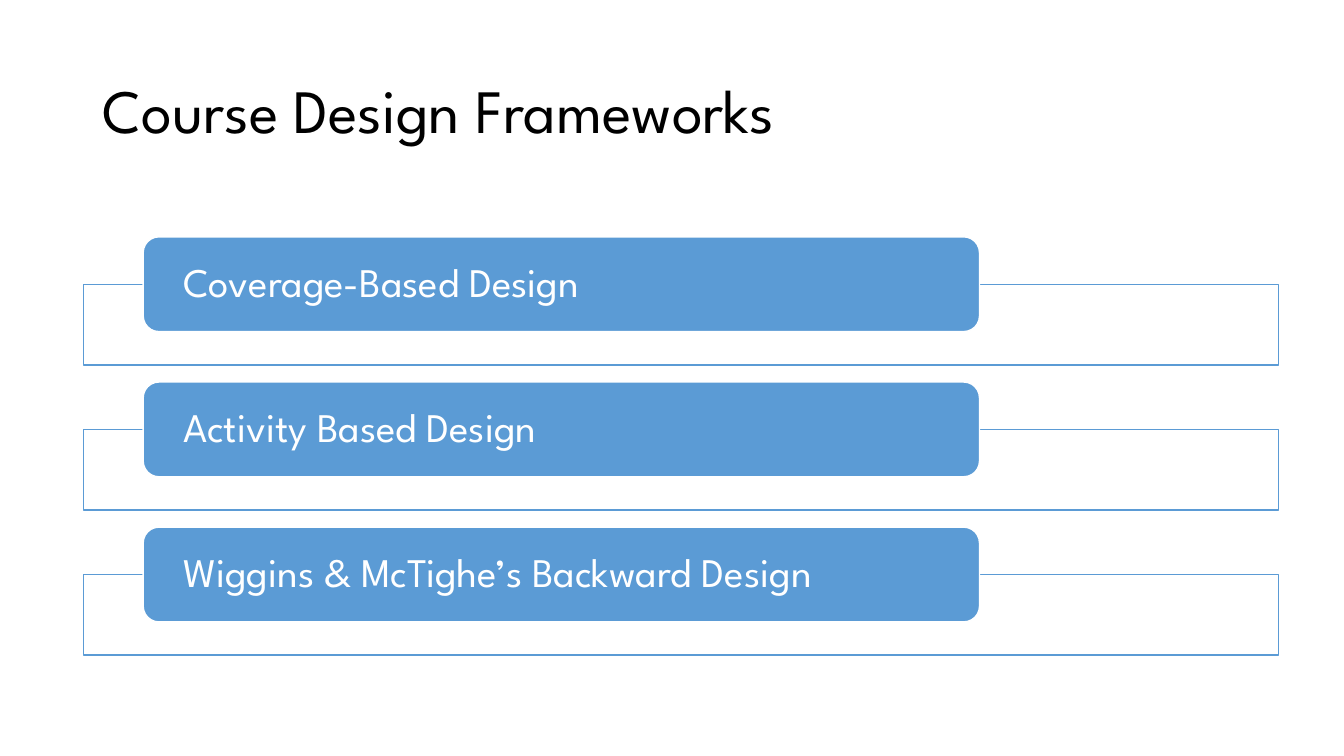
from pptx import Presentation
from pptx.dml.color import RGBColor
from pptx.enum.shapes import MSO_SHAPE as Shape
from pptx.enum.text import MSO_ANCHOR as Anchor, MSO_AUTO_SIZE as AutoSize, PP_ALIGN as Align
from pptx.util import Inches, Pt

FONT = "League Spartan"
COLORS = {"white": "FFFFFF", "blue": "5B9BD5", "black": "000000"}
FRAMEWORKS = [
    "Coverage-Based Design",
    "Activity Based Design",
    "Wiggins & McTighe’s Backward Design",
]


def color(name):
    return RGBColor.from_string(COLORS[name])


def write_text(shape, text, size, color_name, inset_x, inset_y):
    frame = shape.text_frame
    frame.text = text
    frame.word_wrap = True
    frame.auto_size = AutoSize.NONE
    frame.vertical_anchor = Anchor.MIDDLE
    frame.margin_left = frame.margin_right = Inches(inset_x)
    frame.margin_top = frame.margin_bottom = Inches(inset_y)
    paragraph = frame.paragraphs[0]
    paragraph.alignment = Align.LEFT
    paragraph.line_spacing = 0.9
    paragraph.font.name = FONT
    paragraph.font.size = Pt(size)
    paragraph.font.color.rgb = color(color_name)


def add_title(slide, text, left, top, width, height):
    title = slide.shapes.title
    title.left, title.top = Inches(left), Inches(top)
    title.width, title.height = Inches(width), Inches(height)
    write_text(title, text, 44, "black", 0.1, 0.05)


def add_block(slide, kind, left, top, width, height, fill, line):
    shape = slide.shapes.add_shape(
        kind, Inches(left), Inches(top), Inches(width), Inches(height))
    shape.shadow.inherit = False
    shape.fill.solid()
    shape.fill.fore_color.rgb = color(fill)
    shape.line.color.rgb = color(line)
    shape.line.width = Pt(1)
    return shape


def add_framework_list(slide, labels, left, top, width, pitch=1.44):
    for index, label in enumerate(labels):
        row_top = top + index * pitch
        # Outlined frame behind the label
        add_block(slide, Shape.RECTANGLE, left, row_top + 0.47, width, 0.8, "white", "blue")
        # Rounded label overlapping the frame's top edge
        bar = add_block(slide, Shape.ROUNDED_RECTANGLE, left + 0.59, row_top,
                        width * 0.7, 0.94, "blue", "white")
        write_text(bar, label, 29, "white", 0.35, 0)


def main():
    presentation = Presentation()
    presentation.slide_width, presentation.slide_height = Inches(13.33), Inches(7.5)
    title_only = presentation.slide_layouts[5]
    slide = presentation.slides.add_slide(title_only)
    add_framework_list(slide, FRAMEWORKS, left=0.83, top=2.35, width=11.85)
    add_title(slide, "Course Design Frameworks", 0.92, 0.4, 11.5, 1.45)
    presentation.save("out.pptx")


if __name__ == "__main__":
    main()
